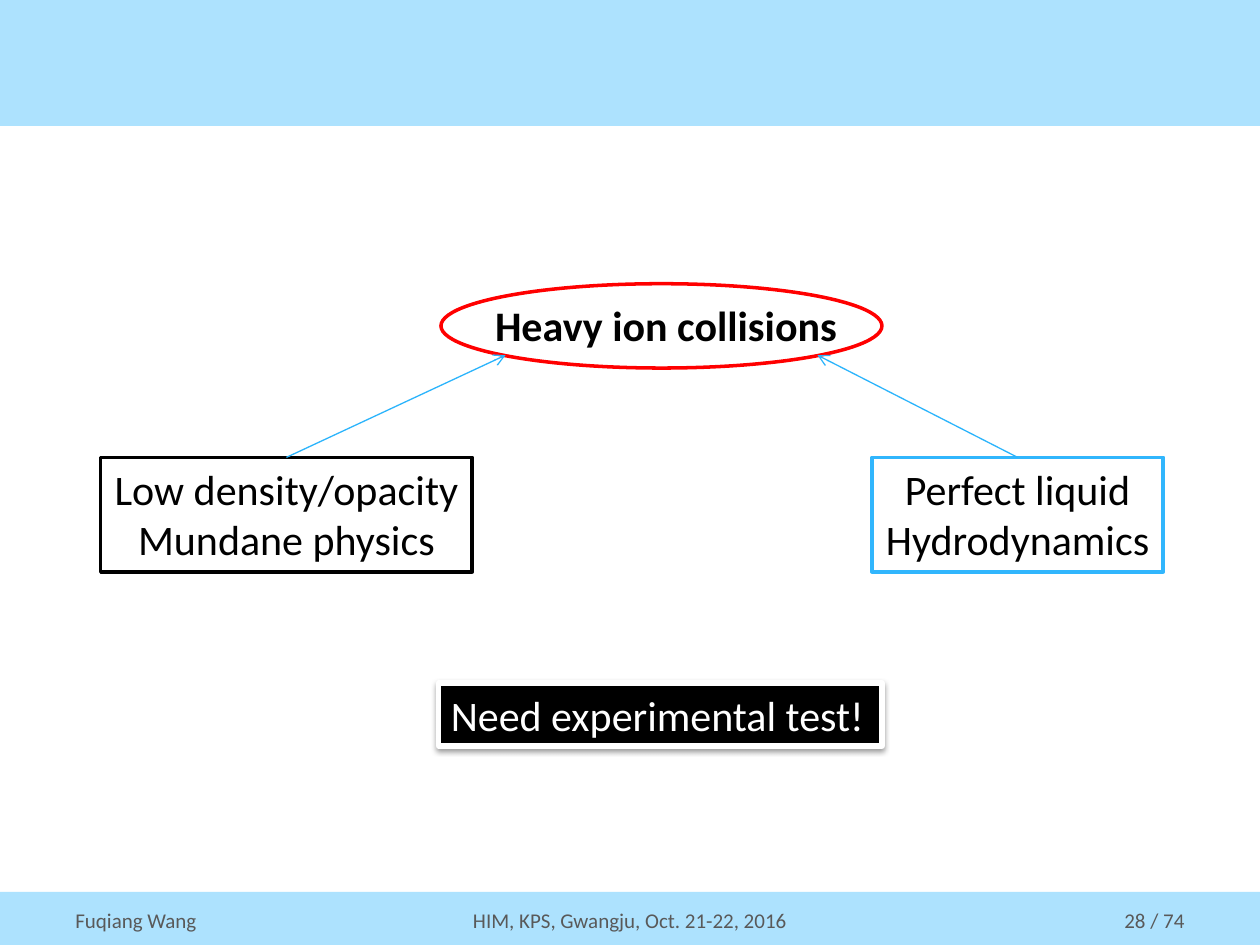
from lxml.etree import SubElement
from pptx import Presentation
from pptx.dml.color import RGBColor
from pptx.enum.shapes import MSO_CONNECTOR, MSO_SHAPE
from pptx.enum.text import MSO_ANCHOR as ANCHOR, MSO_AUTO_SIZE as AUTO, PP_ALIGN as ALIGN
from pptx.oxml.ns import qn
from pptx.util import Cm, Pt

BLACK = RGBColor(0x00, 0x00, 0x00)
WHITE = RGBColor(0xFF, 0xFF, 0xFF)
RED = RGBColor(0xFF, 0x00, 0x00)
GREY = RGBColor(0x59, 0x59, 0x59)
BAND_BLUE = RGBColor(0xAD, 0xE2, 0xFE)
BOX_BLUE = RGBColor(0x31, 0xB6, 0xFD)
ARROW_BLUE = RGBColor(0x2B, 0xB4, 0xFC)
FONT = "Calibri"
WIDTH, HEIGHT = 25.4, 19.05


def write(sp, lines, size=24, color=BLACK, bold=False, align=ALIGN.LEFT,
          anchor=ANCHOR.TOP, wrap=False):
    tf = sp.text_frame
    tf.word_wrap = wrap
    tf.auto_size = AUTO.NONE if wrap else AUTO.SHAPE_TO_FIT_TEXT
    tf.vertical_anchor = anchor
    for i, line in enumerate(lines):
        p = tf.paragraphs[0] if i == 0 else tf.add_paragraph()
        p.text = line
        p.alignment = align
        p.font.name = FONT
        p.font.size = Pt(size)
        p.font.bold = bold
        p.font.color.rgb = color


def add_shape(s, box, kind=MSO_SHAPE.RECTANGLE, fill=None, line=None, weight=2):
    sp = s.shapes.add_shape(kind, *map(Cm, box))
    sp.shadow.inherit = False
    if fill is None:
        sp.fill.background()
    else:
        sp.fill.solid()
        sp.fill.fore_color.rgb = fill
    if line is None:
        sp.line.fill.background()
    else:
        sp.line.color.rgb = line
        sp.line.width = Pt(weight)
    return sp


def add_label(s, box, text, **style):
    write(s.shapes.add_textbox(*map(Cm, box)), [text], **style)


def add_shadow(sp):
    effects = sp._element.spPr.find(qn("a:effectLst"))
    shadow = SubElement(effects, qn("a:outerShdw"), blurRad=str(Pt(3.1)),
                        dist=str(Pt(1.6)), dir="5400000", rotWithShape="0")
    color = SubElement(shadow, qn("a:srgbClr"), val=str(BLACK))
    SubElement(color, qn("a:alpha"), val="38000")


def add_arrow(s, source, x, y):
    line = s.shapes.add_connector(MSO_CONNECTOR.STRAIGHT, 0, 0, Cm(x), Cm(y))
    line.begin_connect(source, 0)
    line.line.color.rgb = ARROW_BLUE
    line.line.width = Pt(0.75)
    SubElement(line.line._get_or_add_ln(), qn("a:tailEnd"), type="arrow")
    SubElement(line._element.spPr, qn("a:effectLst"))


def add_footer(s, left, width, text, align):
    add_label(s, (left, 18.03, width, 1.02), text, size=12, color=GREY,
              align=align, anchor=ANCHOR.MIDDLE, wrap=True)


def main():
    """Build the heavy ion collisions slide and save it."""
    prs = Presentation()
    prs.slide_width, prs.slide_height = Cm(WIDTH), Cm(HEIGHT)
    s = prs.slides.add_slide(prs.slide_layouts[6])

    add_shape(s, (0, 17.98, WIDTH, 1.07), fill=BAND_BLUE)
    add_shape(s, (0, 0, WIDTH, 2.54), fill=BAND_BLUE)

    add_label(s, (9.73, 5.92, 7.47, 1.27), "Heavy ion collisions", bold=True)
    liquid = add_shape(s, (17.58, 9.22, 5.87, 2.31), fill=WHITE, line=BOX_BLUE)
    write(liquid, ["Perfect liquid", "Hydrodynamics"], align=ALIGN.CENTER)
    mundane = add_shape(s, (2.03, 9.22, 7.49, 2.31), fill=WHITE, line=BLACK)
    write(mundane, ["Low density/opacity", "Mundane physics"], align=ALIGN.CENTER)
    test = add_shape(s, (8.84, 13.77, 8.94, 1.27), fill=BLACK, line=WHITE, weight=3)
    write(test, ["Need experimental test!"], color=WHITE)
    add_shadow(test)

    add_shape(s, (8.89, 5.72, 8.89, 1.7), MSO_SHAPE.OVAL, line=RED)
    add_arrow(s, mundane, 10.19, 7.16)
    add_arrow(s, liquid, 16.48, 7.16)

    add_footer(s, 1.27, 5.92, "Fuqiang Wang", ALIGN.LEFT)
    add_footer(s, 0, WIDTH, "HIM, KPS, Gwangju, Oct. 21-22, 2016", ALIGN.CENTER)
    add_footer(s, 18.21, 5.92, "28 / 74", ALIGN.RIGHT)

    prs.save("out.pptx")


if __name__ == "__main__":
    main()
